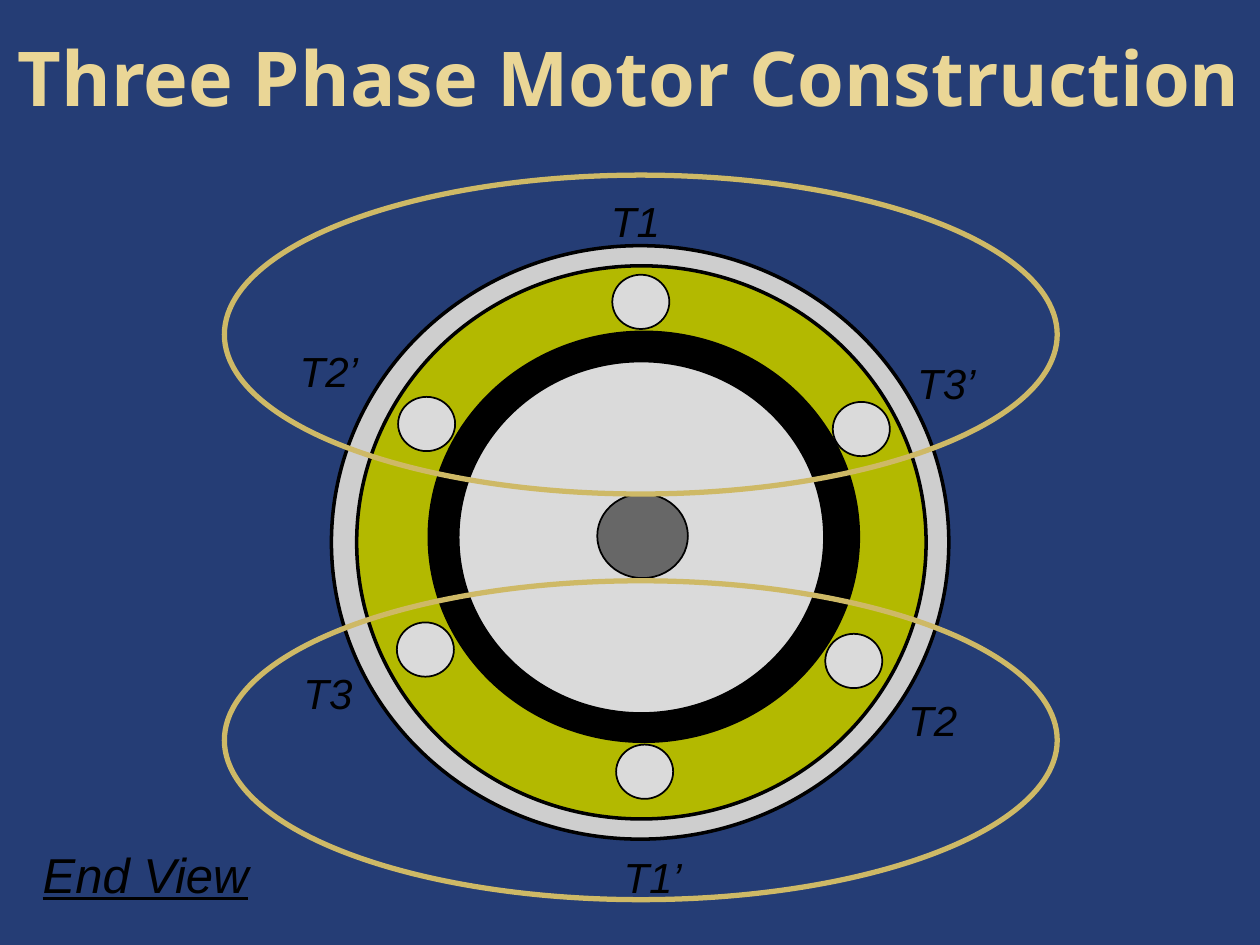
"""Build a slide showing the end view of a three phase motor."""
from dataclasses import dataclass
from typing import Optional

from pptx import Presentation
from pptx.dml.color import RGBColor
from pptx.enum.shapes import MSO_SHAPE
from pptx.enum.text import MSO_ANCHOR, PP_ALIGN
from pptx.slide import Slide
from pptx.util import Pt

OVAL = MSO_SHAPE.OVAL
MIDDLE, TOP = MSO_ANCHOR.MIDDLE, MSO_ANCHOR.TOP
CENTER, LEFT = PP_ALIGN.CENTER, PP_ALIGN.LEFT

NAVY = RGBColor(0x25, 0x3D, 0x75)
CREAM = RGBColor(0xEA, 0xD6, 0x96)
GOLD = RGBColor(0xCE, 0xB9, 0x66)
OLIVE = RGBColor(0xB3, 0xB9, 0x00)
SILVER = RGBColor(0xCE, 0xCE, 0xCE)
PALE = RGBColor(0xDA, 0xDA, 0xDA)
GRAY = RGBColor(0x67, 0x67, 0x67)
BLACK = RGBColor(0x00, 0x00, 0x00)


@dataclass(frozen=True)
class Ellipse:
    left: float
    top: float
    width: float
    height: float
    fill: Optional[RGBColor]
    line: RGBColor = BLACK
    weight: float = 1


@dataclass(frozen=True)
class Label:
    text: str
    left: float
    top: float
    width: float
    height: float = 36
    size: float = 24
    font: str = "Arial"
    color: RGBColor = BLACK
    bold: bool = False
    italic: bool = True
    underline: bool = False
    align: PP_ALIGN = LEFT
    anchor: MSO_ANCHOR = TOP


TITLE = Label("Three Phase Motor Construction", 1.4, -2.2, 715.7, 91.4, 43.2,
              "Noto Sans", CREAM, True, False, False, CENTER, MIDDLE)

RINGS = [
    Ellipse(189.4, 140.4, 352.8, 339.1, SILVER, weight=2),
    Ellipse(203.8, 151.9, 325.4, 316.1, OLIVE, weight=2),
    Ellipse(244.8, 189.4, 246.2, 234.7, BLACK),
    Ellipse(262.1, 206.6, 208.8, 200.9, PALE),
    Ellipse(341.3, 282.2, 51.8, 48.2, GRAY),
]

SLOT_CORNERS = [(227.5, 226.8), (349.9, 157), (475.9, 229.7),
                (226.8, 355.7), (352.1, 425.5), (471.6, 362.2)]
SLOTS = [Ellipse(left, top, 32.6, 31, PALE) for left, top in SLOT_CORNERS]

FIELDS = [Ellipse(128.2, top, 475.9, 182.2, None, GOLD, 3)
          for top in (100.1, 331.9)]

LABELS = [
    Label("T1", 342, 108, 46),
    Label("End View", 17.3, 478.8, 188.6, 40.3, 28, underline=True),
    Label("T2", 511.9, 393.1, 46),
    Label("T2’", 164.2, 193.7, 52.6),
    Label("T3", 166.3, 378, 46),
    Label("T1’", 349.2, 483.1, 56.9),
    Label("T3’", 517, 200.9, 55.4),
]


def draw_ellipse(page: Slide, ellipse: Ellipse) -> None:
    """Draw one outlined ellipse, filled if it has a fill colour."""
    shape = page.shapes.add_shape(OVAL, Pt(ellipse.left), Pt(ellipse.top),
                                  Pt(ellipse.width), Pt(ellipse.height))
    shape.shadow.inherit = False
    if ellipse.fill is None:
        shape.fill.background()
    else:
        shape.fill.solid()
        shape.fill.fore_color.rgb = ellipse.fill
    shape.line.color.rgb = ellipse.line
    shape.line.width = Pt(ellipse.weight)


def draw_label(page: Slide, label: Label) -> None:
    """Draw one line of text in its own box."""
    box = page.shapes.add_textbox(Pt(label.left), Pt(label.top),
                                  Pt(label.width), Pt(label.height))
    frame = box.text_frame
    frame.word_wrap = True
    frame.vertical_anchor = label.anchor
    para = frame.paragraphs[0]
    para.alignment = label.align
    span = para.add_run()
    span.text = label.text
    span.font.name = label.font
    span.font.size = Pt(label.size)
    span.font.color.rgb = label.color
    span.font.bold = label.bold
    span.font.italic = label.italic
    span.font.underline = label.underline


def main() -> None:
    """Build the deck and save it."""
    deck = Presentation()
    deck.slide_width, deck.slide_height = Pt(720), Pt(540)
    page = deck.slides.add_slide(deck.slide_layouts[6])
    page.background.fill.solid()
    page.background.fill.fore_color.rgb = NAVY
    draw_label(page, TITLE)
    for ellipse in RINGS + SLOTS:
        draw_ellipse(page, ellipse)
    for label in LABELS:
        draw_label(page, label)
    for field in FIELDS:
        draw_ellipse(page, field)
    deck.save("out.pptx")


if __name__ == "__main__":
    main()
